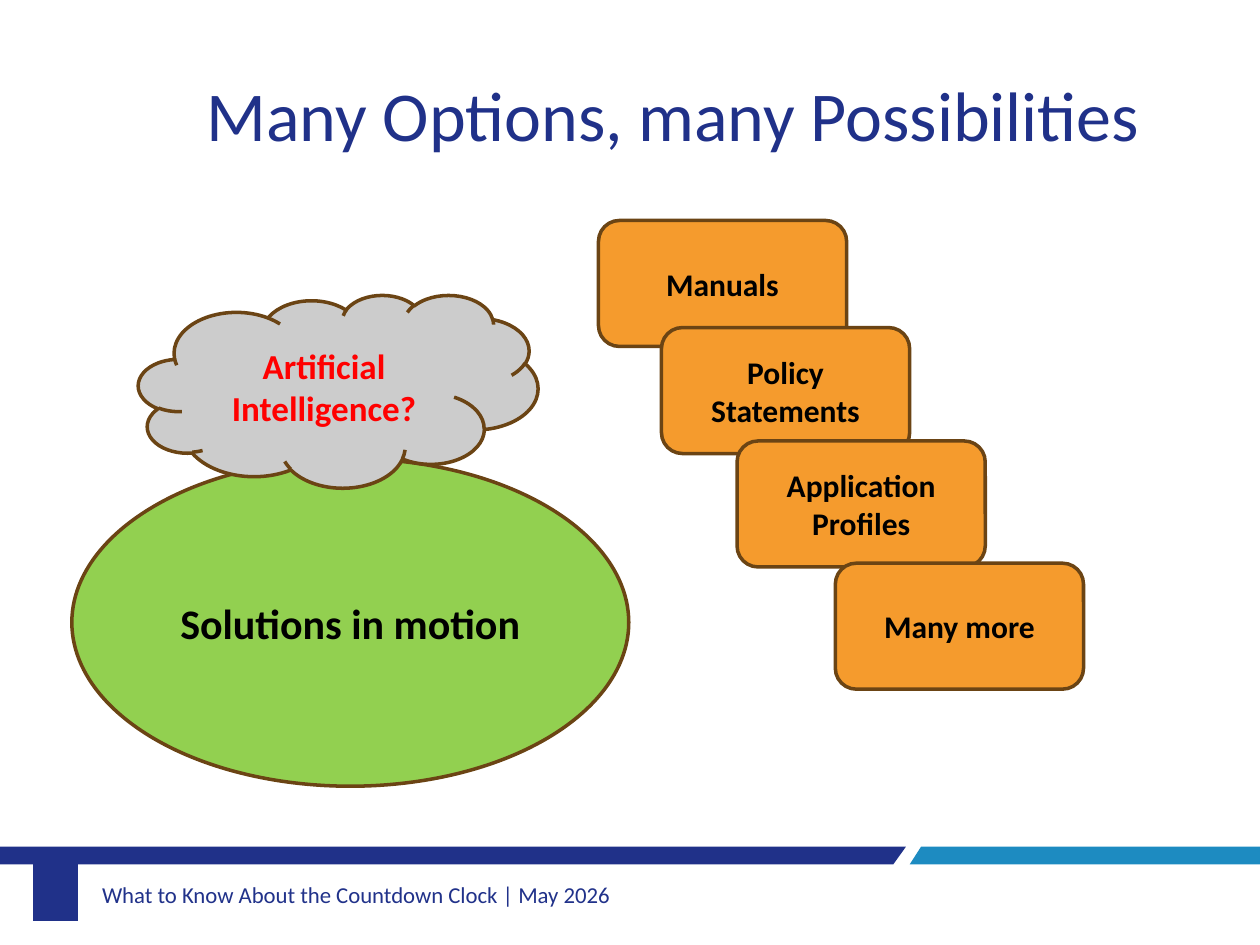
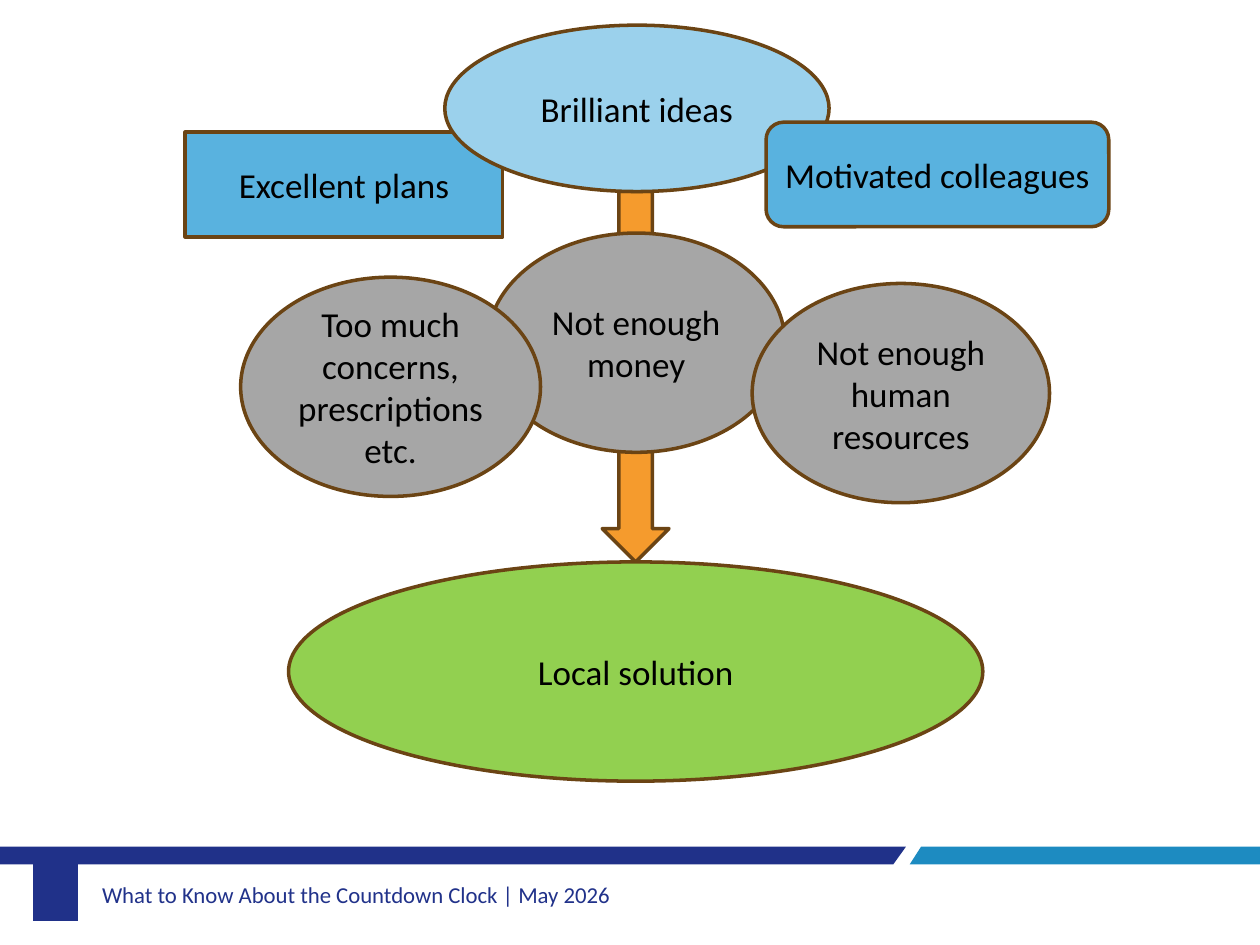
from pptx import Presentation
from pptx.dml.color import RGBColor
from pptx.enum.shapes import MSO_SHAPE
from pptx.enum.text import MSO_ANCHOR, MSO_AUTO_SIZE, PP_ALIGN
from pptx.util import Inches, Pt

COLORS = {
    "navy": "203189", "blue": "1D8BC1", "footer": "21328A", "outline": "6B4414",
    "green": "92D050", "orange": "F59B2D", "silver": "CCCCCC", "gray": "A6A6A6",
    "sky": "59B2DF", "pale": "9BD1EC", "black": "000000", "red": "FF0000",
}
FONT = "Calibri"
FOOTER = "What to Know About the Countdown Clock | May 2026"
BANDS = [
    ("navy", [(7.19, 6.72), (0, 6.72), (0, 6.86), (7.09, 6.86)]),
    ("blue", [(10, 6.72), (7.31, 6.72), (7.22, 6.86), (10, 6.86)]),
    ("navy", [(0.26, 7.31), (0.62, 7.31), (0.62, 6.72), (0.26, 6.72)]),
]

ELLIPSE, ROUNDED = MSO_SHAPE.OVAL, MSO_SHAPE.ROUNDED_RECTANGLE
PLAIN = {"size": 20}
OPTION = {"size": 18, "bold": True}
OPTION_SIZE = (1.97, 1)
OBSTACLE_SIZE = (2.36, 1.74)

TITLE = "Many Options, many Possibilities"
OPTIONS = [
    ("Manuals", 4.75, 1.75),
    ("Policy Statements", 5.25, 2.6),
    ("Application Profiles", 5.85, 3.5),
    ("Many more", 6.63, 4.47),
]
OPTION_SHAPES = [
    (ELLIPSE, (0.57, 3.64, 4.42, 2.6), "green", "Solutions in motion", {"size": 24, "bold": True}),
    *[(ROUNDED, (x, y, *OPTION_SIZE), "orange", text, OPTION) for text, x, y in OPTIONS],
    (MSO_SHAPE.CLOUD, (1.1, 2.34, 3.17, 1.53), "silver", "Artificial Intelligence?",
     {"size": 20, "bold": True, "color": "red"}),
]
SOLUTION_SHAPES = [
    (MSO_SHAPE.DOWN_ARROW, (4.78, 1.52, 0.53, 2.94), "orange", "", PLAIN),
    (MSO_SHAPE.RECTANGLE, (1.47, 1.05, 2.52, 0.83), "sky", "Excellent plans", PLAIN),
    (ELLIPSE, (3.53, 0.2, 3.05, 1.32), "pale", "Brilliant ideas", PLAIN),
    (ROUNDED, (6.08, 0.97, 2.72, 0.83), "sky", "Motivated colleagues", PLAIN),
    (ELLIPSE, (3.87, 1.85, *OBSTACLE_SIZE), "gray", "Not enough money", PLAIN),
    (ELLIPSE, (2.29, 4.46, 5.51, 1.74), "green", "Local solution", PLAIN),
    (ELLIPSE, (5.97, 2.25, *OBSTACLE_SIZE), "gray", "Not enough human resources", PLAIN),
    (ELLIPSE, (1.91, 2.2, 2.38, 1.74), "gray", "Too much concerns, prescriptions etc.", PLAIN),
]


def rgb(name):
    return RGBColor.from_string(COLORS[name])


def set_attrs(obj, values):
    for name, value in values.items():
        setattr(obj, name, value)


def write(tf, text, size, color="black", bold=False, align=PP_ALIGN.CENTER):
    p = tf.paragraphs[0]
    p.alignment = align
    r = p.add_run()
    r.text = text
    set_attrs(r.font, {"name": FONT, "size": Pt(size), "bold": bold})
    r.font.color.rgb = rgb(color)


def paint(sp, fill):
    sp.shadow.inherit = False
    sp.fill.solid()
    sp.fill.fore_color.rgb = rgb(fill)


def add_frame(s):
    for color, points in BANDS:
        corners = [(Inches(x), Inches(y)) for x, y in points]
        builder = s.shapes.build_freeform(*corners[0])
        builder.add_line_segments(corners[1:], close=True)
        sp = builder.convert_to_shape()
        paint(sp, color)
        sp.line.fill.background()
    box = s.shapes.add_textbox(*map(Inches, (0.74, 6.9, 5.8, 0.4)))
    set_attrs(box.text_frame, {
        "word_wrap": True, "vertical_anchor": MSO_ANCHOR.MIDDLE,
        "margin_left": Inches(0.07), "margin_right": Inches(0.07),
        "margin_top": Inches(0.04), "margin_bottom": Inches(0.04),
    })
    write(box.text_frame, FOOTER, 13, "footer", align=PP_ALIGN.LEFT)


def add_title(s, text):
    sp = s.shapes.title
    set_attrs(sp, {"left": Inches(1.54), "top": Inches(0.52),
                   "width": Inches(7.89), "height": Inches(0.77)})
    set_attrs(sp.text_frame, {"word_wrap": False, "auto_size": MSO_AUTO_SIZE.NONE,
                              "vertical_anchor": MSO_ANCHOR.TOP})
    write(sp.text_frame, text, 40, "navy", align=PP_ALIGN.LEFT)


def add_shapes(s, shapes):
    for kind, place, fill, text, style in shapes:
        sp = s.shapes.add_shape(kind, *map(Inches, place))
        paint(sp, fill)
        sp.line.color.rgb = rgb("outline")
        sp.line.width = Pt(2)
        if text:
            write(sp.text_frame, text, **style)


def main():
    prs = Presentation()
    prs.slide_width, prs.slide_height = Inches(10), Inches(7.5)
    title_only, blank = prs.slide_layouts[5], prs.slide_layouts[6]
    for layout, title, shapes in [(title_only, TITLE, OPTION_SHAPES),
                                  (blank, None, SOLUTION_SHAPES)]:
        s = prs.slides.add_slide(layout)
        add_frame(s)
        if title:
            add_title(s, title)
        add_shapes(s, shapes)
    prs.save("out.pptx")


if __name__ == "__main__":
    main()
